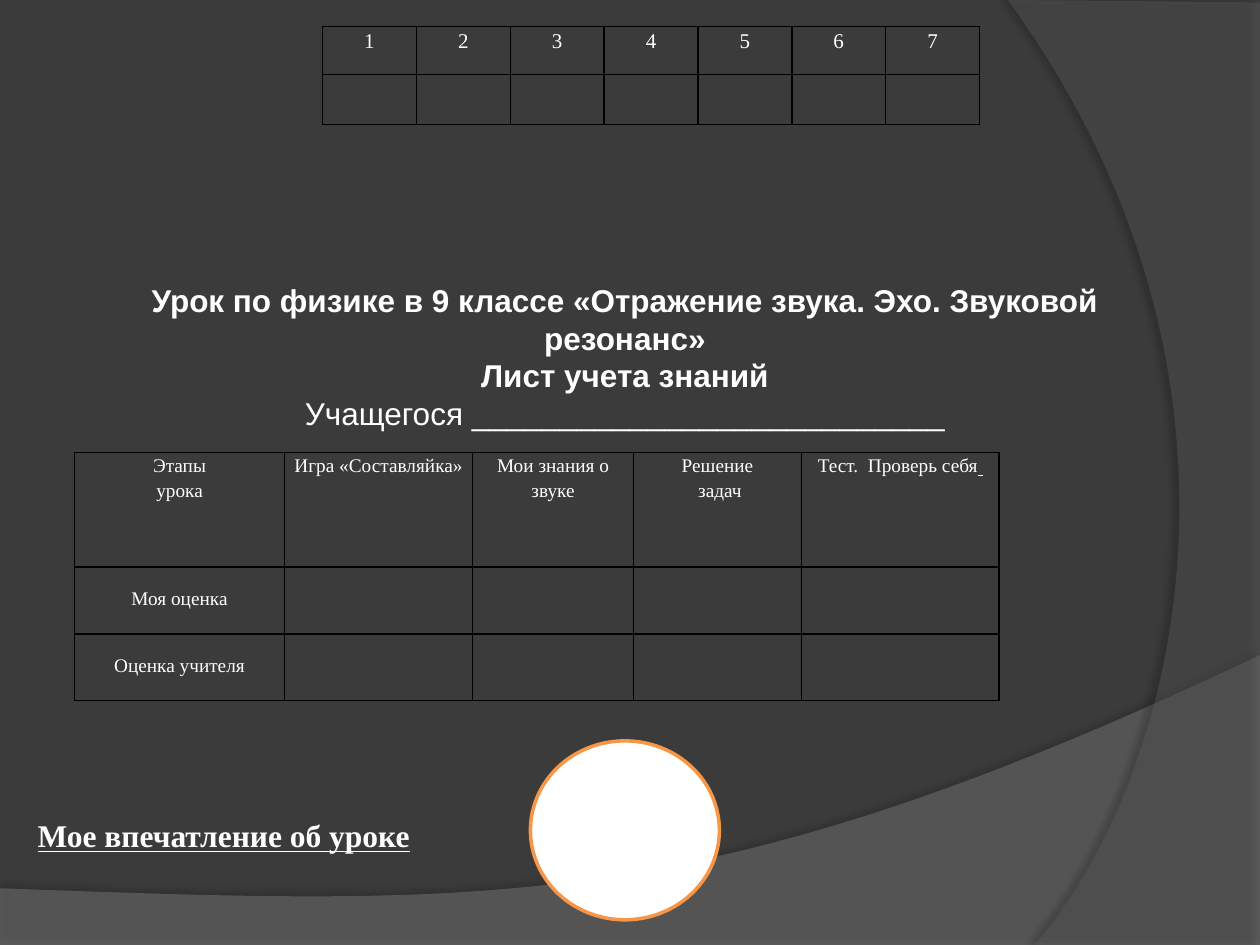
import dataclasses
import typing

import lxml.etree
import pptx
import pptx.dml.color
import pptx.enum.shapes
import pptx.enum.text
import pptx.oxml.ns
import pptx.util

Inches = pptx.util.Inches
Pt = pptx.util.Pt
qn = pptx.oxml.ns.qn
Align = pptx.enum.text.PP_ALIGN
Anchor = pptx.enum.text.MSO_ANCHOR
Fit = pptx.enum.text.MSO_AUTO_SIZE
Point = tuple[float, float]

SERIF = "Times New Roman"
SANS = "Arial"
WHITE = "FFFFFF"
BLACK = "000000"


@dataclasses.dataclass
class Wave:
    start: Point
    before: list[Point]
    curve: list[Point]
    after: list[Point]
    fill: str
    alpha: int
    shade: int
    dist: float
    angle: int


@dataclasses.dataclass
class Grid:
    left: float
    top: float
    cols: list[float]
    rows: list[float]
    texts: list[list[str]]
    size: int
    gaps: list[float]


WAVES = [
    Wave((0, 7.05), [(0, 7.51), (10, 7.51), (10, 5.2)],
         [(5.59, 7.29), (3.91, 7.19), (0, 7.05)], [], "7F7F7F", 45, 35, 3.5, 270),
    Wave((10, 0.02), [(10, 7.5), (8.21, 7.5)],
         [(9.35, 6.19), (10.18, 3), (8, 0)], [(10, 0.02)], "5E5E5E", 40, 45, 4, 180),
]

MARKS = Grid(2.56, 0.21, [0.745] * 7, [0.38, 0.4],
             [[str(n) for n in range(1, 8)]], 12, [1.15])
STAGES = Grid(0.59, 3.59, [1.67, 1.49, 1.28, 1.33, 1.57], [0.91, 0.53, 0.53],
              [["Этапы\nурока", "Игра «Составляйка»", "Мои знания о звуке",
                "Решение\n задач", "Тест.  Проверь себя"],
               ["Моя оценка"], ["Оценка учителя"]], 11, [1.15, 2, 2])


def paint(color: typing.Any, code: str) -> None:
    color.rgb = pptx.dml.color.RGBColor.from_string(code)


def flood(fill: typing.Any, code: str) -> None:
    fill.solid()
    paint(fill.fore_color, code)


def add_node(parent: typing.Any, tag: str, **attrs: typing.Any) -> typing.Any:
    return lxml.etree.SubElement(parent, qn(tag), {k: str(v) for k, v in attrs.items()})


def add_tint(parent: typing.Any, alpha: int) -> None:
    add_node(parent, "a:alpha", val=alpha * 1000)


def style(run: typing.Any, face: str, size: int, bold: bool = False, under: bool = False) -> None:
    font = run.font
    font.name, font.size, font.bold, font.underline = face, Pt(size), bold, under
    paint(font.color, WHITE)


def trace(first: Point, curve: list[Point], steps: int = 60) -> list[Point]:
    ends = [first, *curve]
    dots = []
    for n in range(1, steps + 1):
        t = n / steps
        parts = [(1 - t) ** 3, 3 * t * (1 - t) ** 2, 3 * t * t * (1 - t), t ** 3]
        dots.append((sum(w * p[0] for w, p in zip(parts, ends)),
                     sum(w * p[1] for w, p in zip(parts, ends))))
    return dots


def draw_wave(slide: typing.Any, wave: Wave) -> None:
    dots = wave.before + trace(wave.before[-1], wave.curve) + wave.after
    pen = slide.shapes.build_freeform(Inches(wave.start[0]), Inches(wave.start[1]))
    pen.add_line_segments([(Inches(x), Inches(y)) for x, y in dots], close=True)
    shape = pen.convert_to_shape()
    flood(shape.fill, wave.fill)
    add_tint(shape.element.spPr.find(f".//{qn('a:srgbClr')}"), wave.alpha)
    shape.line.fill.background()
    shape.shadow.inherit = False
    glow = add_node(shape.element.spPr.find(qn("a:effectLst")), "a:outerShdw",
                    blurRad=Pt(4), dist=Pt(wave.dist), dir=wave.angle * 60000,
                    algn="ctr", rotWithShape=0)
    add_tint(add_node(glow, "a:srgbClr", val=BLACK), wave.shade)


def frame_cell(cell: typing.Any) -> None:
    cell.margin_left = cell.margin_right = Inches(0.07)
    cell.margin_top = cell.margin_bottom = 0
    props = cell._tc.get_or_add_tcPr()
    for side in "LRTB":
        edge = add_node(props, f"a:ln{side}", w=Pt(1))
        add_node(add_node(edge, "a:solidFill"), "a:srgbClr", val=BLACK)
    cell.fill.background()


def draw_grid(slide: typing.Any, grid: Grid) -> typing.Any:
    table = slide.shapes.add_table(
        len(grid.rows), len(grid.cols), Inches(grid.left), Inches(grid.top),
        Inches(sum(grid.cols)), Inches(sum(grid.rows))).table
    table.first_row = table.horz_banding = False
    for col, width in zip(table.columns, grid.cols):
        col.width = Inches(width)
    for row, height in zip(table.rows, grid.rows):
        row.height = Inches(height)
    for cell in table.iter_cells():
        frame_cell(cell)
    for r, (texts, gap) in enumerate(zip(grid.texts, grid.gaps)):
        for c, text in enumerate(texts):
            frame = table.cell(r, c).text_frame
            frame.text = text
            for para in frame.paragraphs:
                para.alignment = Align.CENTER
                para.line_spacing = gap
                style(para.runs[0], SERIF, grid.size)
    return table


def add_box(slide: typing.Any, left: float, top: float, width: float, height: float,
            text: str, wrap: bool) -> typing.Any:
    box = slide.shapes.add_textbox(Inches(left), Inches(top), Inches(width), Inches(height))
    frame = box.text_frame
    frame.word_wrap = wrap
    frame.auto_size = Fit.SHAPE_TO_FIT_TEXT
    frame.text = text
    return frame


def main() -> None:
    deck = pptx.Presentation()
    deck.slide_width, deck.slide_height = Inches(10), Inches(7.5)
    slide = deck.slides.add_slide(deck.slide_layouts[6])
    flood(slide.background.fill, "3B3B3B")
    for wave in WAVES:
        draw_wave(slide, wave)

    draw_grid(slide, MARKS)

    title = add_box(slide, 0.59, 2.18, 8.74, 1.31,
                    "Урок по физике в 9 классе «Отражение звука. Эхо. Звуковой резонанс»\n"
                    "Лист учета знаний\n"
                    "Учащегося ___________________________", True)
    for para, bold in zip(title.paragraphs, [True, True, False]):
        para.alignment = Align.CENTER
        style(para.runs[0], SANS, 18, bold)

    stages = draw_grid(slide, STAGES)
    tail = stages.cell(0, 4).text_frame.paragraphs[0].add_run()
    tail.text = " "
    style(tail, SERIF, STAGES.size, True, True)

    mood = add_box(slide, 0.2, 6.43, 3.19, 0.4, "Мое впечатление об уроке", False)
    mood.vertical_anchor = Anchor.MIDDLE
    style(mood.paragraphs[0].runs[0], SERIF, 18, True, True)

    face = slide.shapes.add_shape(pptx.enum.shapes.MSO_SHAPE.OVAL, Inches(4.21),
                                  Inches(5.88), Inches(1.5), Inches(1.42))
    face.shadow.inherit = False
    flood(face.fill, WHITE)
    paint(face.line.color, "F79646")
    face.line.width = Pt(2)

    deck.save("out.pptx")


if __name__ == "__main__":
    main()
